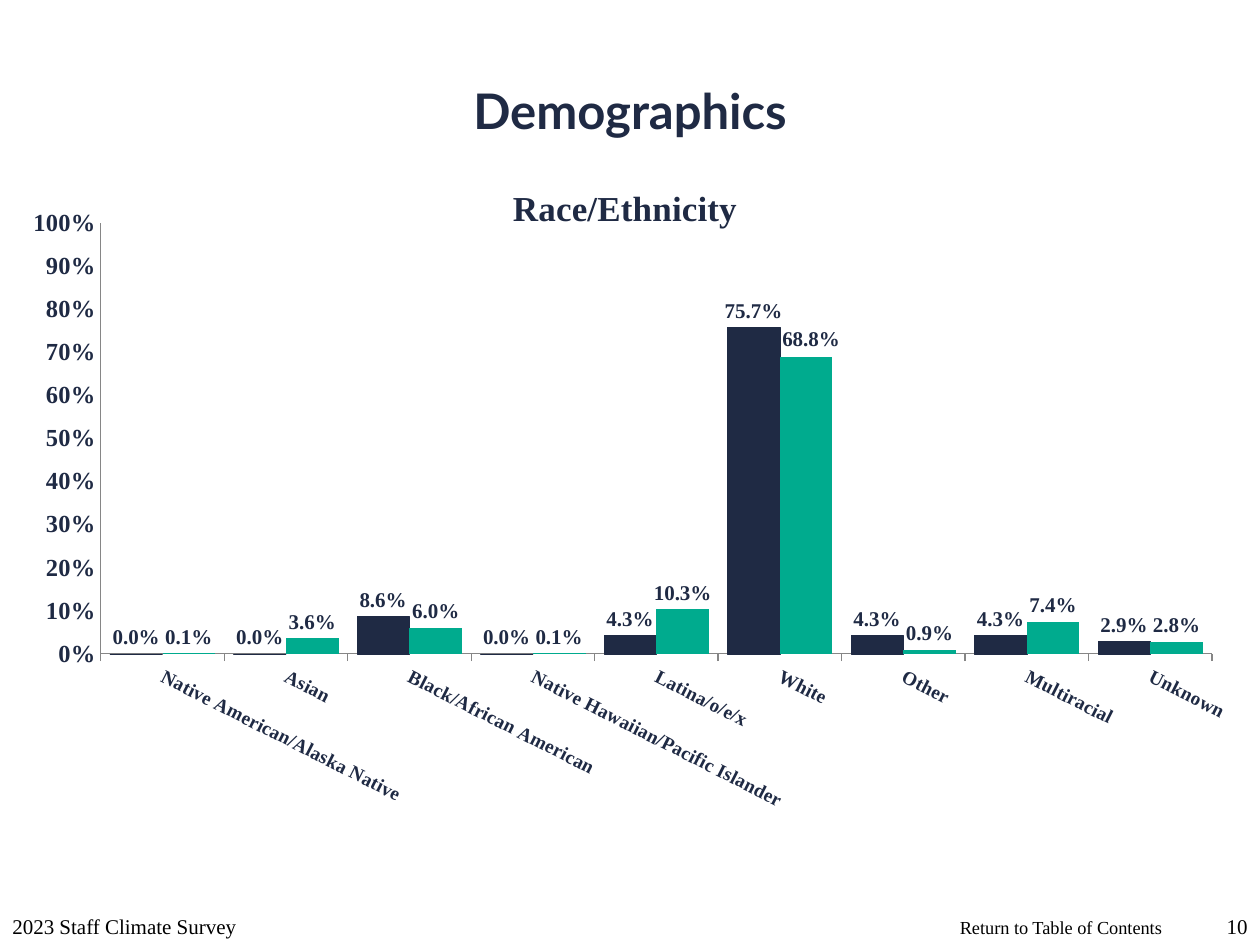
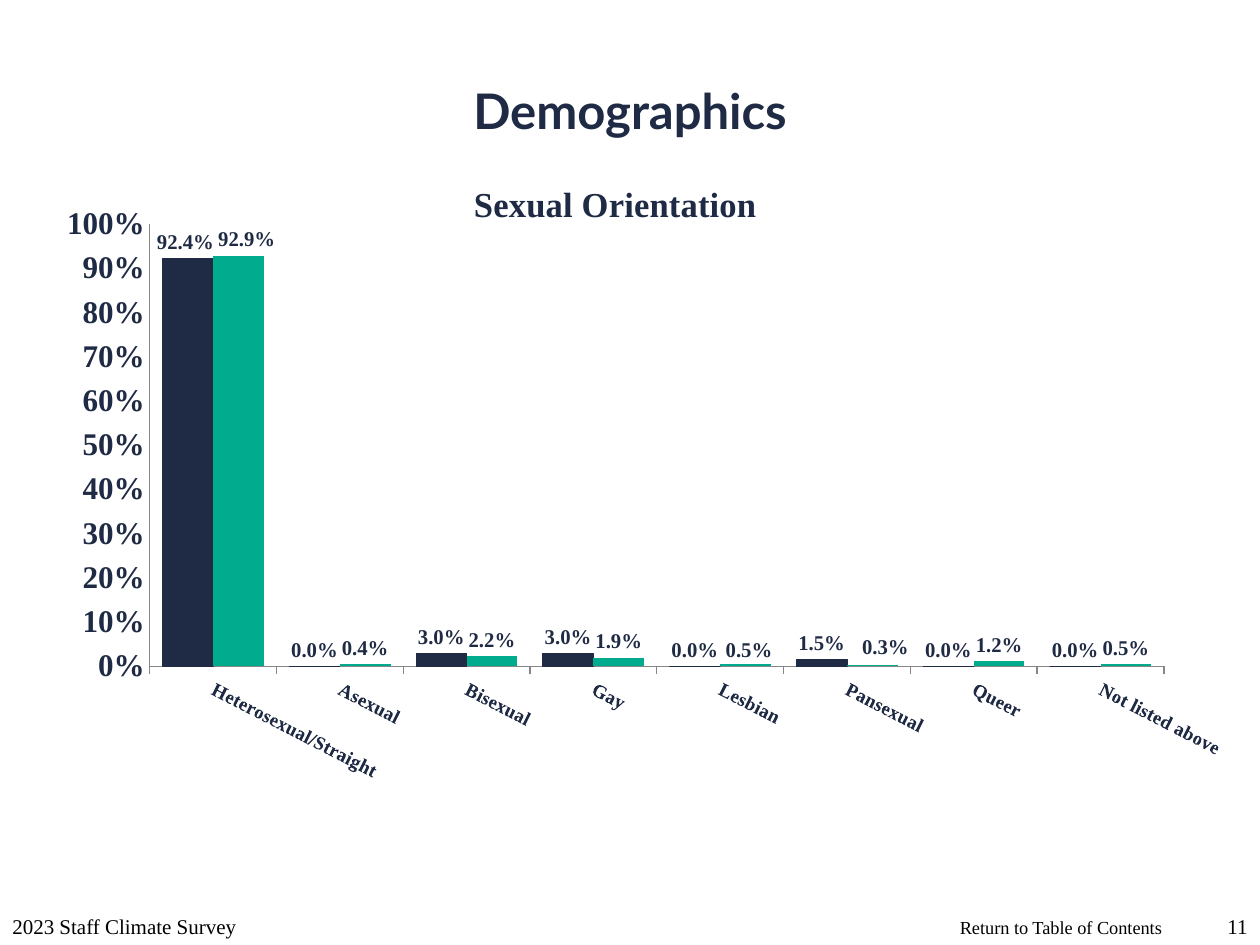
"""Build two demographic chart slides of a staff climate survey."""
from dataclasses import dataclass

from lxml import etree
from pptx import Presentation
from pptx.chart.data import CategoryChartData
from pptx.dml.color import RGBColor
from pptx.enum.chart import XL_CHART_TYPE, XL_LABEL_POSITION, XL_TICK_MARK
from pptx.enum.text import MSO_ANCHOR, PP_ALIGN
from pptx.oxml.ns import qn
from pptx.util import Cm, Pt

COLUMNS = XL_CHART_TYPE.COLUMN_CLUSTERED
OUT_END = XL_LABEL_POSITION.OUTSIDE_END
TICK_OUT, TICK_NONE = XL_TICK_MARK.OUTSIDE, XL_TICK_MARK.NONE
TOP, MIDDLE, BOTTOM = MSO_ANCHOR.TOP, MSO_ANCHOR.MIDDLE, MSO_ANCHOR.BOTTOM
LEFT, CENTER, RIGHT = PP_ALIGN.LEFT, PP_ALIGN.CENTER, PP_ALIGN.RIGHT


@dataclass(frozen=True)
class Theme:
    """Colours, fonts and type sizes of the deck."""
    navy: str = "1F2A44"
    green: str = "00AB8E"
    black: str = "000000"
    gray: str = "868686"
    head: str = "Lato"
    body: str = "Times New Roman"
    title: float = 28
    sub: float = 20
    chart: float = 18
    foot: float = 12
    link: float = 10.5
    label: float = 12
    group: float = 11
    tilt: int = 27


@dataclass(frozen=True)
class Box:
    """Place of an object in centimetres."""
    x: float
    y: float
    w: float
    h: float

    def cm(self) -> tuple[Cm, Cm, Cm, Cm]:
        """Give the place as lengths."""
        return Cm(self.x), Cm(self.y), Cm(self.w), Cm(self.h)


@dataclass(frozen=True)
class Note:
    """Text box in the footer."""
    text: str
    box: Box
    size: float
    align: PP_ALIGN = LEFT
    anchor: MSO_ANCHOR = BOTTOM
    wrap: bool = True


@dataclass(frozen=True)
class Shift:
    """Move of one value label in percent of the chart."""
    group: int
    row: int
    x: float
    y: float


@dataclass(frozen=True)
class Survey:
    """One survey question, with shares and layout in percent."""
    name: str
    page: int
    box: Box
    spot: dict[str, float]
    plot: dict[str, float]
    gap: int
    scale: float
    shifts: tuple[Shift, ...]
    rows: dict[str, tuple[float, float]]


THEME = Theme()
SHARE = "0.0%"
EDGE = {"xMode": "edge", "yMode": "edge"}
INNER = {"layoutTarget": "inner"} | EDGE
GROUPS = {"Your Institution": THEME.navy, "Comparison Group": THEME.green}
TITLE = Box(0, 0.62, 25.4, 3.18)
FOOT = (
    Note("Return to Table of Contents", Box(19.1, 18.34, 4.62, 0.71),
         THEME.link, anchor=TOP, wrap=False),
    Note("2023 Staff Climate Survey", Box(0, 17.78, 8.05, 1.27), THEME.foot),
)
PAGE = Box(24.13, 17.78, 1.27, 1.27)

SURVEYS = (
    Survey(
        "Race/Ethnicity", 10, Box(0, 3.18, 25.4, 15.04),
        {"x": 40.2, "y": 2.9},
        {"x": 8, "y": 8.7, "w": 88.2, "h": 57.8}, 35, 14,
        (Shift(1, 5, 0.4, -0.2),),
        {
            "Native American/Alaska Native": (0, 0.1),
            "Asian": (0, 3.6),
            "Black/African American": (8.6, 6),
            "Native Hawaiian/Pacific Islander": (0, 0.1),
            "Latina/o/e/x": (4.3, 10.3),
            "White": (75.7, 68.8),
            "Other": (4.3, 0.9),
            "Multiracial": (4.3, 7.4),
            "Unknown": (2.9, 2.8),
        },
    ),
    Survey(
        "Sexual Orientation", 11, Box(0.46, 3.18, 24.21, 15.42),
        {"x": 37.5, "y": 2.3},
        {"x": 10.7, "y": 8.7, "w": 85.5, "h": 57.8}, 50, 18,
        (Shift(0, 0, -0.2, 0.1), Shift(1, 0, 0.7, 0),
         Shift(1, 4, 0.3, 0.3), Shift(1, 5, 1.1, -0.2)),
        {
            "Heterosexual/Straight": (92.4, 92.9),
            "Asexual": (0, 0.4),
            "Bisexual": (3, 2.2),
            "Gay": (3, 1.9),
            "Lesbian": (0, 0.5),
            "Pansexual": (1.5, 0.3),
            "Queer": (0, 1.2),
            "Not listed above": (0, 0.5),
        },
    ),
)


def style(font, *, size: float, color: str = THEME.navy,
          face: str = THEME.body, bold: bool = True) -> None:
    """Format a font."""
    font.size, font.name, font.bold = Pt(size), face, bold
    font.color.rgb = RGBColor.from_string(color)


def write(frame, text: str, *, align: PP_ALIGN = LEFT, **look) -> None:
    """Fill a text frame with one formatted paragraph."""
    para = frame.paragraphs[0]
    para.alignment = align
    run = para.add_run()
    run.text = text
    style(run.font, **look)


def add_note(slide, note: Note) -> None:
    """Draw a footer text."""
    frame = slide.shapes.add_textbox(*note.box.cm()).text_frame
    frame.word_wrap, frame.vertical_anchor = note.wrap, note.anchor
    write(frame, note.text, align=note.align, size=note.size,
          color=THEME.black, bold=False)


def place(node, index: int, modes: dict[str, str],
          spot: dict[str, float]) -> None:
    """Give a chart part a manual layout."""
    for old in node.findall(qn("c:layout")):
        node.remove(old)
    layout = etree.Element(qn("c:layout"))
    node.insert(index, layout)
    manual = etree.SubElement(layout, qn("c:manualLayout"))
    parts = modes | {tag: f"{val / 100:.3f}" for tag, val in spot.items()}
    for tag, val in parts.items():
        etree.SubElement(manual, qn(f"c:{tag}")).set("val", val)


def add_head(chart, survey: Survey) -> None:
    """Set the chart title over the plot."""
    chart.has_title = True
    title = chart.chart_title
    write(title.text_frame, survey.name, size=THEME.sub)
    node = title._element
    place(node, 1, EDGE, survey.spot)
    node.find(qn("c:overlay")).set("val", "1")


def set_axes(chart, survey: Survey) -> None:
    """Format both axes."""
    cat, val = chart.category_axis, chart.value_axis
    val.minimum_scale, val.maximum_scale, val.major_unit = 0, 1, 0.1
    val.tick_labels.number_format = "0%"
    val.tick_labels.number_format_is_linked = False
    for axis, size, tick in ((cat, THEME.group, TICK_OUT),
                             (val, survey.scale, TICK_NONE)):
        axis.has_major_gridlines = False
        axis.major_tick_mark, axis.minor_tick_mark = tick, TICK_NONE
        axis.format.line.color.rgb = RGBColor.from_string(THEME.gray)
        axis.format.line.width = Pt(0.75)
        style(axis.tick_labels.font, size=size)
    body = cat._element.find(qn("c:txPr")).find(qn("a:bodyPr"))
    body.set("rot", str(THEME.tilt * 60000))
    body.set("vert", "horz")


def set_bars(plot, gap: int) -> None:
    """Colour and label the columns."""
    plot.gap_width, plot.overlap = gap, 0
    plot.vary_by_categories = False
    for bars, color in zip(plot.series, GROUPS.values()):
        tint = RGBColor.from_string(color)
        bars.format.fill.solid()
        bars.format.fill.fore_color.rgb = tint
        if color == THEME.navy:
            bars.format.line.color.rgb = tint
            bars.format.line.width = Pt(0.25)
        labels = bars.data_labels
        labels.show_value, labels.position = True, OUT_END
        labels.number_format = SHARE
        labels.number_format_is_linked = False
        style(labels.font, size=THEME.label)


def move_label(plot, shift: Shift) -> None:
    """Move one value label clear of its neighbours."""
    label = plot.series[shift.group].points[shift.row].data_label
    label.position = OUT_END
    style(label.font, size=THEME.label)
    node = label._get_or_add_dLbl()
    place(node, 1, {}, {"x": shift.x, "y": shift.y})
    form = etree.Element(qn("c:numFmt"), formatCode=SHARE, sourceLinked="0")
    node.insert(2, form)


def add_bars(slide, survey: Survey) -> None:
    """Draw the column chart of a survey question."""
    data = CategoryChartData()
    data.categories = survey.rows
    for name, vals in zip(GROUPS, zip(*survey.rows.values())):
        data.add_series(name, [round(val / 100, 3) for val in vals])
    chart = slide.shapes.add_chart(COLUMNS, *survey.box.cm(), data).chart
    chart.has_legend = False
    style(chart.font, size=THEME.chart)
    add_head(chart, survey)
    set_axes(chart, survey)
    plot = chart.plots[0]
    set_bars(plot, survey.gap)
    for shift in survey.shifts:
        move_label(plot, shift)
    area = chart._chartSpace.find(qn("c:chart")).find(qn("c:plotArea"))
    place(area, 0, INNER, survey.plot)


def add_slide(deck, survey: Survey) -> None:
    """Add a slide with title, chart and footer."""
    slide = deck.slides.add_slide(deck.slide_layouts[5])
    title = slide.shapes.title
    title.left, title.top, title.width, title.height = TITLE.cm()
    title.text_frame.vertical_anchor = MIDDLE
    write(title.text_frame, "Demographics", align=CENTER,
          size=THEME.title, face=THEME.head)
    add_bars(slide, survey)
    page = Note(str(survey.page), PAGE, THEME.foot, RIGHT)
    for note in (*FOOT, page):
        add_note(slide, note)


def main() -> None:
    """Build and save the deck."""
    deck = Presentation()
    deck.slide_width, deck.slide_height = Cm(25.4), Cm(19.05)
    for survey in SURVEYS:
        add_slide(deck, survey)
    deck.save("out.pptx")


if __name__ == "__main__":
    main()
